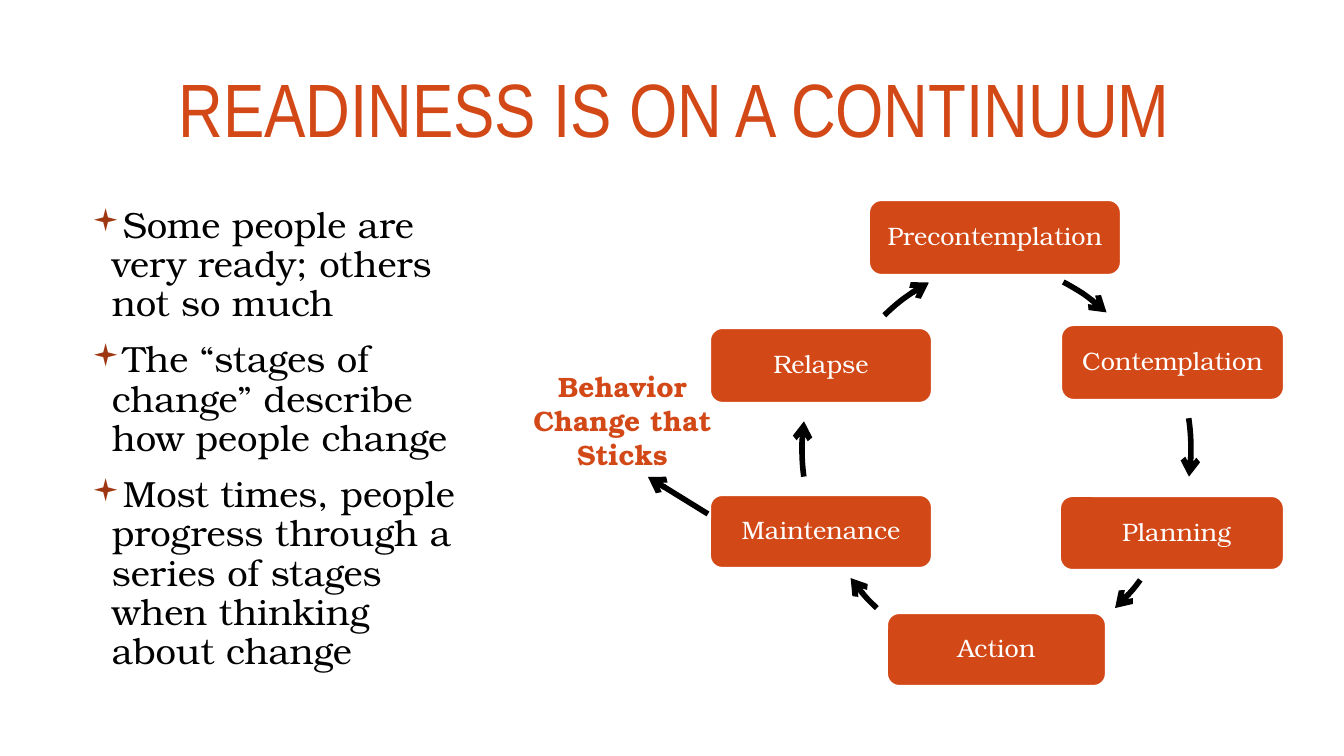
"""Build the slide on readiness as a continuum with its cycle of stages."""
from typing import Any, NamedTuple

from lxml.etree import SubElement
from pptx import Presentation
from pptx.dml.color import RGBColor
from pptx.enum.shapes import MSO_CONNECTOR as Connector, MSO_SHAPE as Shape
from pptx.enum.text import MSO_ANCHOR as Anchor, MSO_AUTO_SIZE as AutoSize, PP_ALIGN as Align
from pptx.oxml.ns import qn
from pptx.slide import Slide
from pptx.util import Emu, Pt

EMU_PER_PX = 914400 / 100.8
ORANGE = RGBColor(0xD3, 0x48, 0x17)
RUST = RGBColor(0x9E, 0x36, 0x11)
BLACK = RGBColor(0, 0, 0)
WHITE = RGBColor(0xFF, 0xFF, 0xFF)
SERIF = "TeX Gyre Bonum"
ARC_DIAMETER = 405
ADJUSTMENT_PER_DEGREE = 0.6
ARROW_WIDTH = Pt(4)


class Box(NamedTuple):
    left: int
    top: int
    width: int
    height: int


class Stage(NamedTuple):
    label: str
    box: Box
    left_inset: int = 10


class Arc(NamedTuple):
    left: int
    top: int
    start: float
    end: float


TITLE_BOX = Box(96, 25, 1157, 177)
POINTS_BOX = Box(82, 202, 400, 489)
OUTCOME_BOX = Box(515, 365, 215, 112)
STAGES = [
    Stage("Precontemplation", Box(869, 200, 252, 75)),
    Stage("Contemplation", Box(1061, 325, 223, 75)),
    Stage("Planning", Box(1060, 496, 224, 74), left_inset=19),
    Stage("Action", Box(887, 613, 219, 73)),
    Stage("Maintenance", Box(710, 495, 222, 73)),
    Stage("Relapse", Box(710, 328, 222, 75)),
]
ARCS = [
    Arc(767, 259, 297.6, 312.6),
    Arc(786, 246, 351.4, 8),
    Arc(775, 257, 36.5, 47.2),
    Arc(813, 258, 133.2, 144.5),
    Arc(802, 247, 172.3, 188),
    Arc(823, 258, 225.8, 241.5),
]
POINTS = [
    "Some people are very ready; others not so much",
    "The “stages of change” describe how people change",
    "Most times, people progress through a series of stages when thinking about change",
]
TITLE_FONT = {"name": "Arial Narrow", "size": Pt(54), "color": ORANGE}
POINT_FONT = {"name": SERIF, "size": Pt(26), "color": BLACK}
STAGE_FONT = {"name": SERIF, "size": Pt(18), "color": WHITE}
OUTCOME_FONT = {"name": SERIF, "size": Pt(20), "color": ORANGE, "bold": True}


def px(length: int) -> Emu:
    """Turn pixels into EMU."""
    return Emu(round(length * EMU_PER_PX))


def place(box: Box) -> list[Emu]:
    """Give a box's position and size in EMU."""
    return [px(length) for length in box]


def format_font(font: Any, values: dict[str, Any]) -> None:
    """Apply format values to a font."""
    for name, value in values.items():
        if name == "color":
            font.color.rgb = value
        else:
            setattr(font, name, value)


def write(paragraph: Any, text: str, font: dict[str, Any], **layout: Any) -> None:
    """Fill a paragraph and set its layout and font."""
    paragraph.text = text
    for name, value in layout.items():
        setattr(paragraph, name, value)
    format_font(paragraph.font, font)
    format_font(paragraph.runs[0].font, font)


def add_arrowhead(line: Any) -> None:
    """Style a line as a black arrow."""
    line.color.rgb = BLACK
    line.width = ARROW_WIDTH
    SubElement(line._get_or_add_ln(), qn("a:tailEnd"), type="arrow")


def add_bullet(paragraph: Any) -> None:
    """Give a paragraph a small square bullet with a hanging indent."""
    properties = paragraph._p.get_or_add_pPr()
    properties.set("marL", str(px(20)))
    properties.set("indent", str(-px(20)))
    color = SubElement(properties, qn("a:buClr"))
    SubElement(color, qn("a:srgbClr"), val=str(RUST))
    SubElement(properties, qn("a:buSzPct"), val="85000")
    SubElement(properties, qn("a:buFont"), typeface="Wingdings", charset="2")
    SubElement(properties, qn("a:buChar"), char="▪")


def add_title(slide: Slide) -> None:
    """Move and format the title placeholder."""
    title = slide.shapes.title
    title.left, title.top, title.width, title.height = place(TITLE_BOX)
    title.text_frame.auto_size = AutoSize.NONE
    title.text_frame.vertical_anchor = Anchor.MIDDLE
    write(title.text_frame.paragraphs[0], "READINESS IS ON A CONTINUUM", TITLE_FONT,
          alignment=Align.CENTER, line_spacing=0.9)


def add_points(slide: Slide) -> None:
    """Add the bulleted points."""
    frame = slide.shapes.add_textbox(*place(POINTS_BOX)).text_frame
    frame.word_wrap = True
    for index, point in enumerate(POINTS):
        paragraph = frame.add_paragraph() if index else frame.paragraphs[0]
        add_bullet(paragraph)
        write(paragraph, point, POINT_FONT, line_spacing=0.9,
              space_before=Pt(12 if index else 0))


def add_stage(slide: Slide, stage: Stage) -> None:
    """Add one stage of the cycle."""
    card = slide.shapes.add_shape(Shape.ROUNDED_RECTANGLE, *place(stage.box))
    card.shadow.inherit = False
    card.fill.solid()
    card.fill.fore_color.rgb = ORANGE
    card.line.color.rgb = WHITE
    card.line.width = Pt(1.5)
    frame = card.text_frame
    frame.word_wrap = True
    frame.margin_left = px(stage.left_inset)
    frame.vertical_anchor = Anchor.MIDDLE
    write(frame.paragraphs[0], stage.label, STAGE_FONT,
          alignment=Align.CENTER, line_spacing=0.9)


def add_arc(slide: Slide, arc: Arc) -> None:
    """Add a curved arrow between two stages."""
    circle = Box(arc.left, arc.top, ARC_DIAMETER, ARC_DIAMETER)
    curve = slide.shapes.add_shape(Shape.ARC, *place(circle))
    for index, angle in enumerate((arc.start, arc.end)):
        curve.adjustments[index] = angle * ADJUSTMENT_PER_DEGREE
    curve.shadow.inherit = False
    curve.fill.background()
    add_arrowhead(curve.line)


def add_outcome(slide: Slide) -> None:
    """Add the outcome and the arrow that leaves the cycle towards it."""
    frame = slide.shapes.add_textbox(*place(OUTCOME_BOX)).text_frame
    frame.word_wrap = True
    write(frame.paragraphs[0], "Behavior Change that Sticks", OUTCOME_FONT,
          alignment=Align.CENTER)
    way_out = slide.shapes.add_connector(Connector.STRAIGHT, px(708), px(514), px(648), px(477))
    add_arrowhead(way_out.line)
    SubElement(way_out._element.spPr, qn("a:effectLst"))


def main() -> None:
    """Build and save the presentation."""
    deck = Presentation()
    deck.slide_width, deck.slide_height = px(1344), px(756)
    slide = deck.slides.add_slide(deck.slide_layouts[5])
    for stage, arc in zip(STAGES, ARCS):
        add_stage(slide, stage)
        add_arc(slide, arc)
    add_outcome(slide)
    add_points(slide)
    add_title(slide)
    deck.save("out.pptx")


if __name__ == "__main__":
    main()
